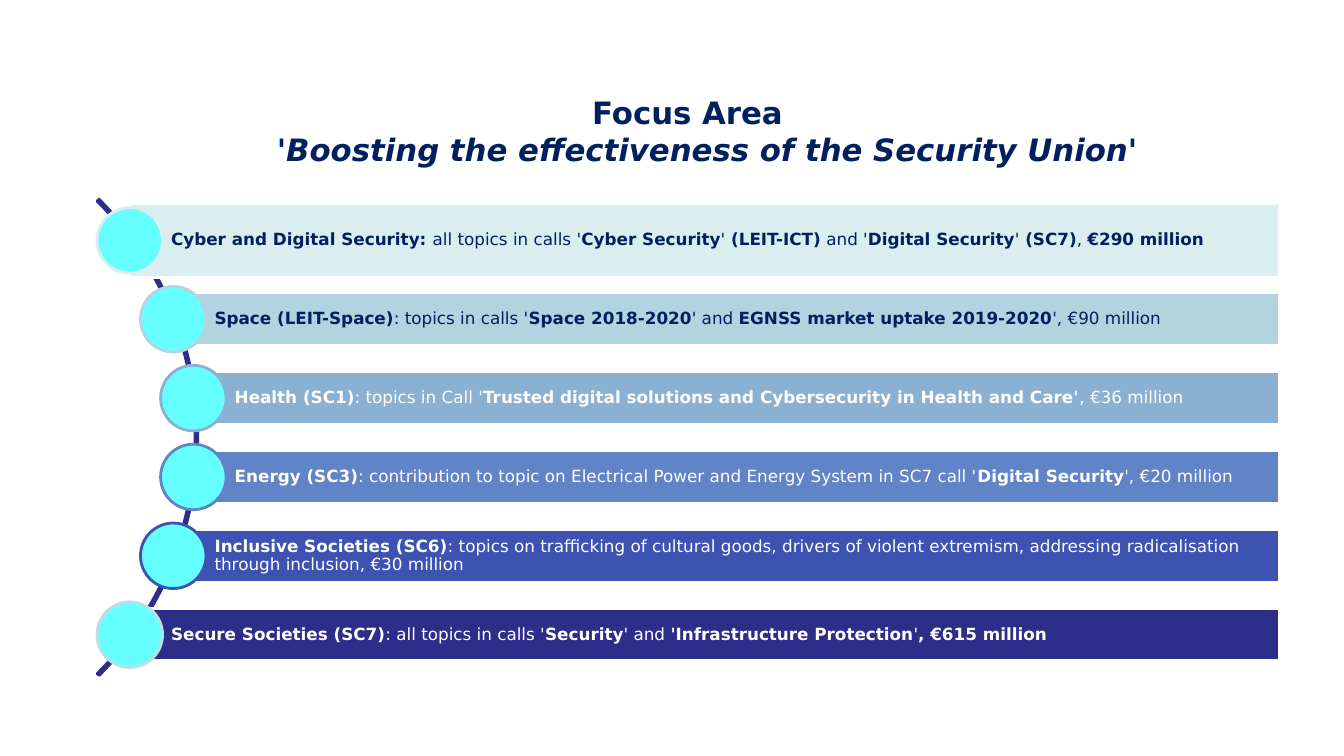
from dataclasses import dataclass

from pptx import Presentation
from pptx import util as u
from pptx.dml import color
from pptx.enum import shapes, text

WIDTH, HEIGHT = u.Inches(13.33), u.Inches(7.5)
COLUMN, ROW = WIDTH / 100, HEIGHT / 100
FONT = "DejaVu Sans"
COLOURS = {
    "navy": "002060",
    "white": "FFFFFF",
    "cyan": "66FFFF",
    "mist": "DAEDEF",
    "ice": "B3D3E0",
    "sky": "8AB1D2",
    "steel": "6084C5",
    "royal": "3D52B1",
    "indigo": "2D2D8A",
    "aqua": "BBE0E3",
}
FIRST_TOPIC_ROW, TOPIC_PITCH = 31.8, 10.43
BAR_RIGHT = 95.2
DISC = 8.67 * ROW
ARC_LEFT, ARC_TOP, ARC_SIZE = -35.4, 13.33, 89.07 * ROW


@dataclass
class Topic:
    wording: str
    column: float
    fill: str
    ink: str = "white"
    rows: float = 6.95
    ring: str = ""


TOPICS = [
    Topic("Cyber and Digital Security: |all topics in calls '|Cyber Security|'| (LEIT-ICT)"
          "| and '|Digital Security|'| (SC7)|, |€290 million",
          9.66, "mist", ink="navy", rows=9.73),
    Topic("Space (LEIT-Space)|: topics in calls '|Space 2018-2020|' and "
          "|EGNSS market uptake 2019-2020|', €90 million",
          12.89, "ice", ink="navy"),
    Topic("Health (SC1)|: topics in Call '|Trusted digital solutions and Cybersecurity "
          "in Health and Care'|, €36 million",
          14.39, "sky"),
    Topic("Energy (SC3)|: contribution to topic on Electrical Power and Energy System "
          "in SC7 call '|Digital Security|', €20 million",
          14.39, "steel"),
    Topic("Inclusive Societies (SC6)|: topics on trafficking of cultural goods, drivers of "
          "violent extremism, addressing radicalisation through inclusion, €30 million",
          12.89, "royal"),
    Topic("Secure Societies (SC7)|: all topics in calls '|Security|' and "
          "|'Infrastructure Protection|'|, €615 million",
          9.66, "indigo", ring="aqua"),
]


def rgb(name: str) -> color.RGBColor:
    return color.RGBColor.from_string(COLOURS[name])


def write(frame, wording: str, *, size: float, ink: str, align, bold=(True, False),
          italic=(False, False), spacing: float = 1.0, broken: bool = False):
    frame.word_wrap = True
    frame.vertical_anchor = text.MSO_ANCHOR.MIDDLE
    paragraph = frame.paragraphs[0]
    paragraph.alignment = align
    paragraph.line_spacing = spacing
    for index, part in enumerate(wording.split("|")):
        if broken and index:
            paragraph.add_line_break()
        run = paragraph.add_run()
        run.text = part
        run.font.name = FONT
        run.font.size = u.Pt(size)
        run.font.bold = bold[index % 2]
        run.font.italic = italic[index % 2]
        run.font.color.rgb = rgb(ink)
    return paragraph


def draw(slide, kind, left: float, top: float, width: float, height: float,
         line: str, fill: str = ""):
    shape = slide.shapes.add_shape(kind, int(left), int(top), int(width), int(height))
    shape.shadow.inherit = False
    if fill:
        shape.fill.solid()
        shape.fill.fore_color.rgb = rgb(fill)
    else:
        shape.fill.background()
    shape.line.color.rgb = rgb(line)
    shape.line.width = u.Pt(2)
    return shape


def draw_title(slide) -> None:
    title = slide.shapes.add_textbox(int(3.5 * COLUMN), int(13.1 * ROW),
                                     int(95.3 * COLUMN), int(8.4 * ROW))
    heading = write(title.text_frame,
                    "Focus Area|'Boosting the effectiveness of the Security Union'",
                    size=22, ink="navy", align=text.PP_ALIGN.CENTER,
                    bold=(True, True), italic=(False, True), broken=True)
    hanging = u.Inches(0.39)
    properties = heading._p.get_or_add_pPr()
    properties.set("marL", str(hanging))
    properties.set("indent", str(-hanging))


def draw_arc(slide) -> None:
    arc = draw(slide, shapes.MSO_SHAPE.BLOCK_ARC, ARC_LEFT * COLUMN, ARC_TOP * ROW,
               ARC_SIZE, ARC_SIZE, line="indigo")
    for index, value in enumerate((189, 27, 0.004)):
        arc.adjustments[index] = value


def draw_topic(slide, topic: Topic, position: int) -> None:
    centre_x = topic.column * COLUMN
    centre_y = (FIRST_TOPIC_ROW + position * TOPIC_PITCH) * ROW
    height = topic.rows * ROW
    bar = draw(slide, shapes.MSO_SHAPE.RECTANGLE, centre_x, centre_y - height / 2,
               BAR_RIGHT * COLUMN - centre_x, height, line="white", fill=topic.fill)
    frame = bar.text_frame
    frame.margin_left = u.Inches(0.41)
    frame.margin_top = frame.margin_right = frame.margin_bottom = u.Inches(0.03)
    write(frame, topic.wording, size=12, ink=topic.ink,
          align=text.PP_ALIGN.LEFT, spacing=0.9)
    draw(slide, shapes.MSO_SHAPE.OVAL, centre_x - DISC / 2, centre_y - DISC / 2,
         DISC, DISC, line=topic.ring or topic.fill, fill="cyan")


def main() -> None:
    deck = Presentation()
    deck.slide_width, deck.slide_height = WIDTH, HEIGHT
    slide = deck.slides.add_slide(deck.slide_layouts[6])
    draw_title(slide)
    draw_arc(slide)
    for position, topic in enumerate(TOPICS):
        draw_topic(slide, topic, position)
    deck.save("out.pptx")


if __name__ == "__main__":
    main()
